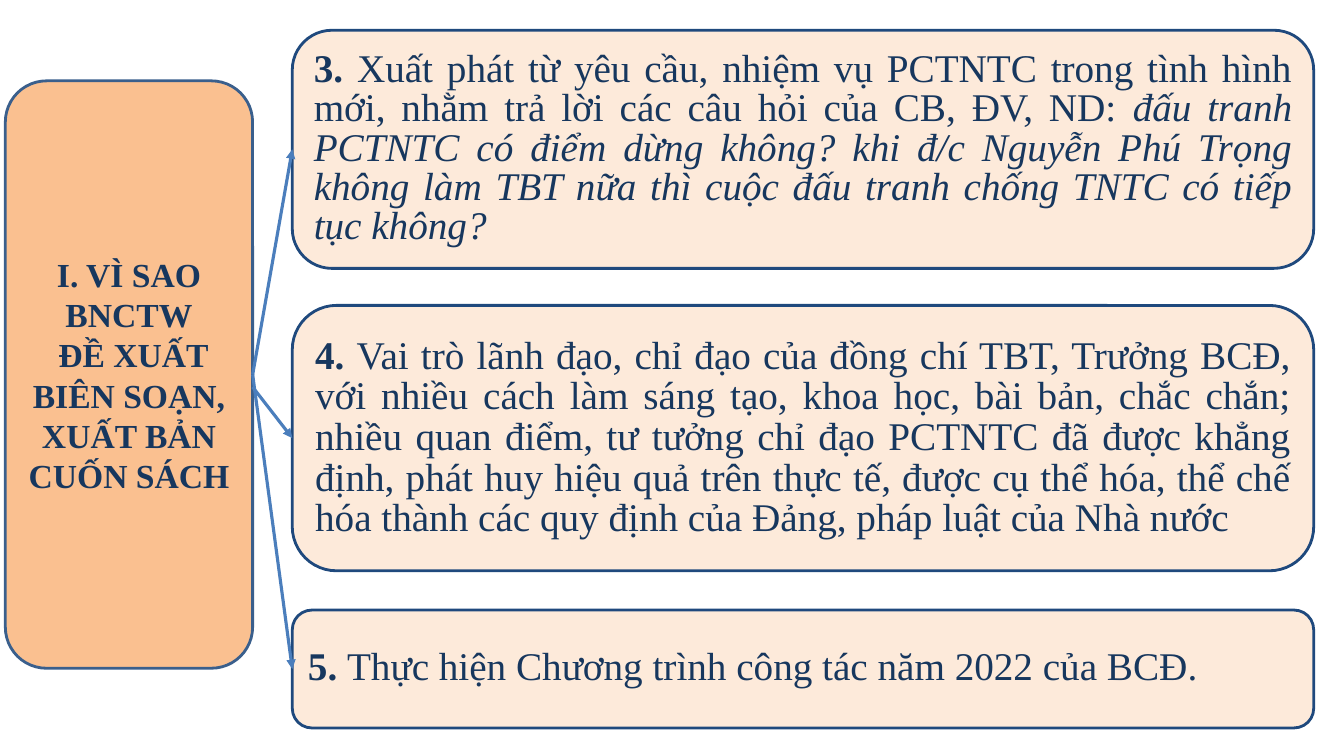
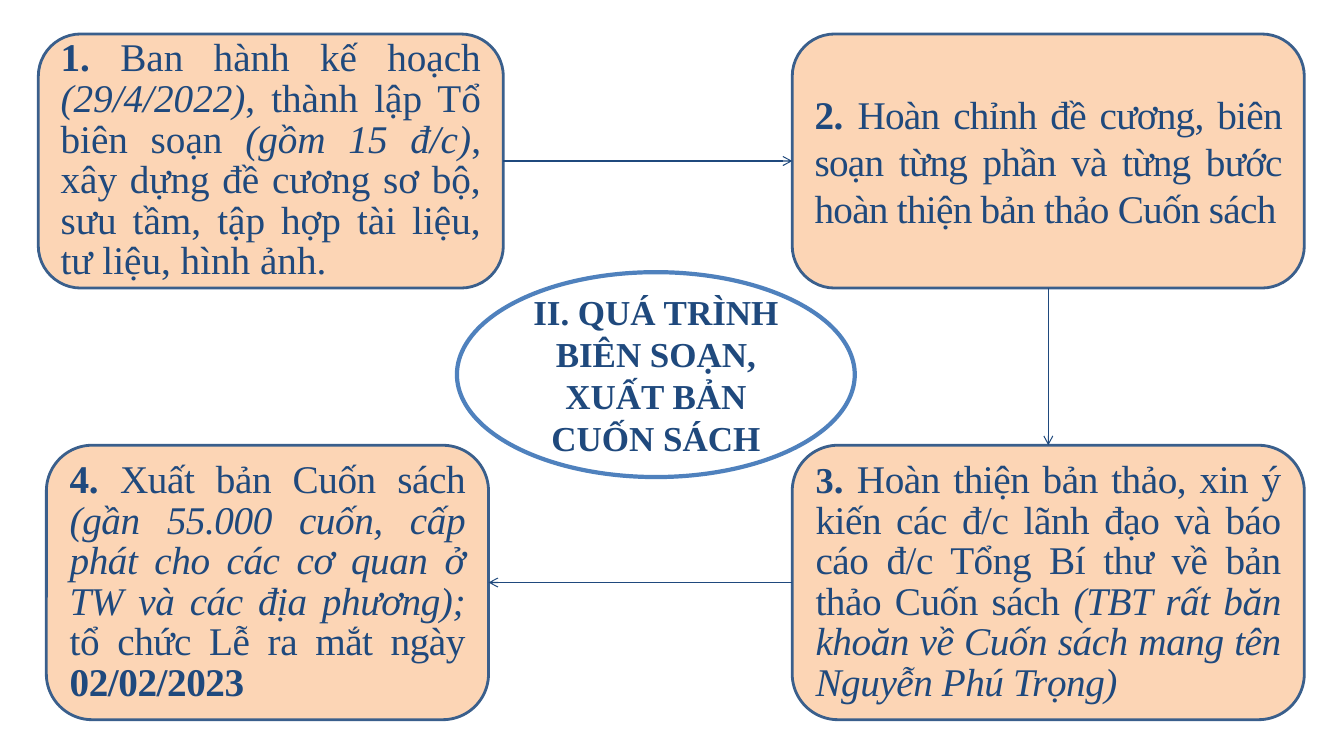
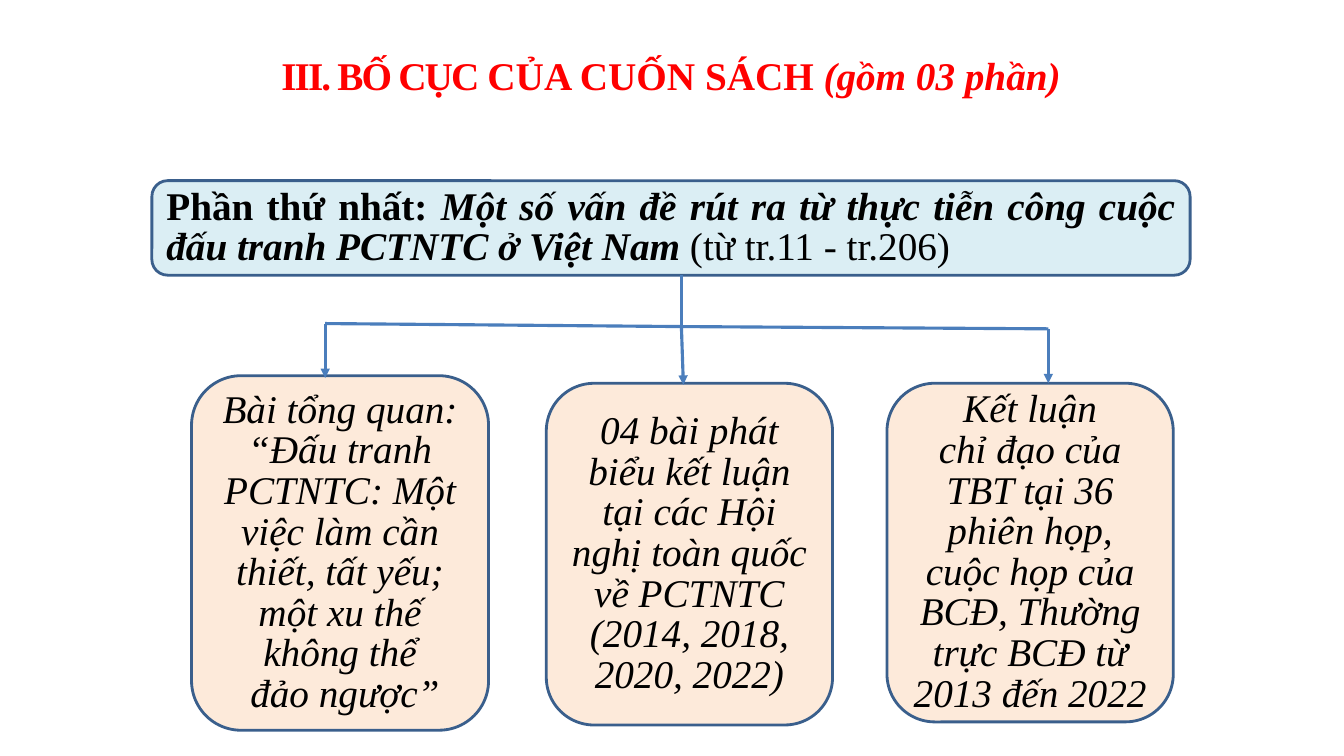
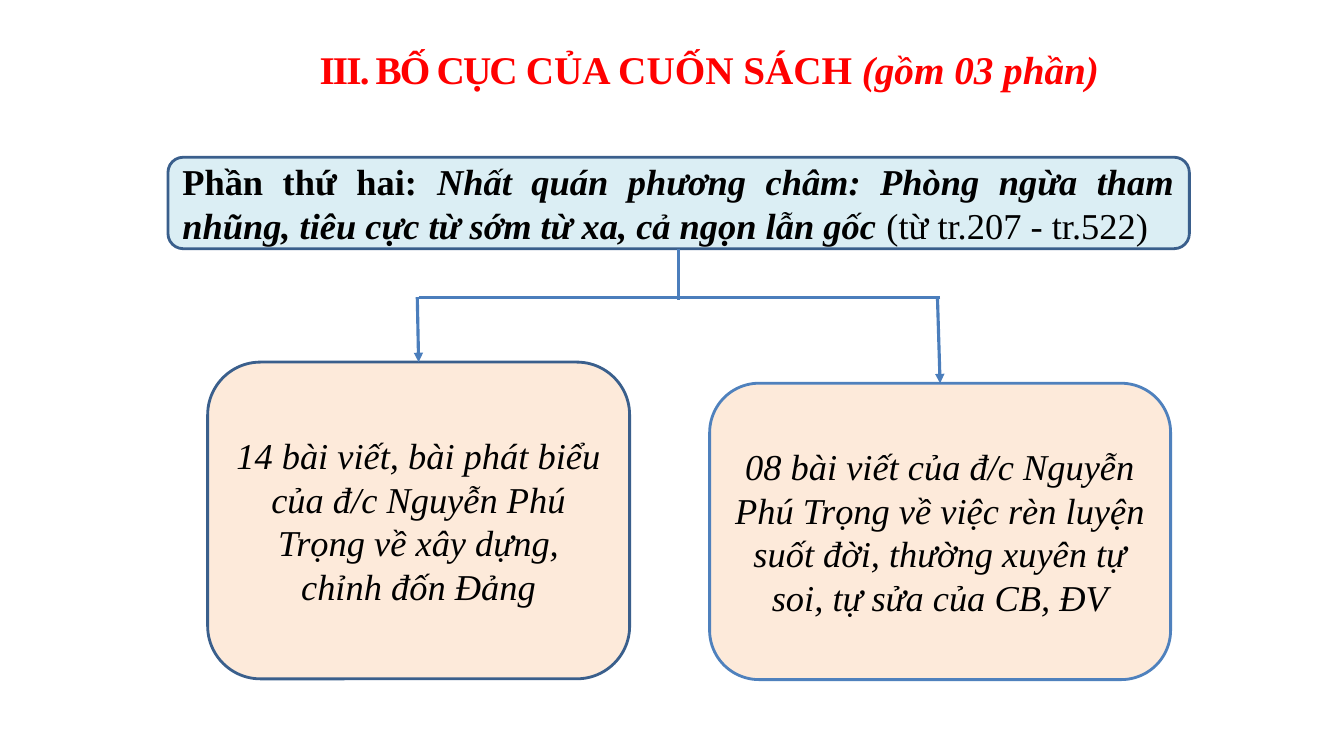
"""Build four slides on the reasons, making and layout of a book."""
from dataclasses import dataclass
from typing import Optional, Union

from pptx import Presentation
from pptx.dml.color import RGBColor
from pptx.enum.shapes import MSO_CONNECTOR, MSO_SHAPE
from pptx.enum.text import MSO_ANCHOR, PP_ALIGN
from pptx.oxml.ns import qn
from pptx.shapes.autoshape import Shape
from pptx.slide import Slide
from pptx.text.text import TextFrame
from pptx.util import Inches, Pt
from lxml.etree import SubElement

FONT = "Times New Roman"
WIDTH, HEIGHT = Inches(13.33), Inches(7.5)
TITLE_ONLY, BLANK = 5, 6
TOP, LEFT, BOTTOM, RIGHT = range(4)
COLORS = {
    "navy": "17375E", "blue": "1F497D", "edge": "3A5F8C", "accent": "4F81BD",
    "arrow": "4B7EBC", "cream": "FDEADA", "peach": "FCD5B5", "orange": "FAC090",
    "ice": "DBEEF4", "white": "FFFFFF", "black": "000000", "red": "FF0000",
}


@dataclass(frozen=True)
class Run:
    text: str
    bold: bool = False
    italic: bool = False
    spacing: float = 0
    size: Optional[float] = None


@dataclass(frozen=True)
class Style:
    color: str
    size: float = 28
    align: PP_ALIGN = PP_ALIGN.CENTER
    leading: Optional[float] = None


@dataclass(frozen=True)
class Area:
    """Position and size in percent of the slide."""
    x: float
    y: float
    w: float
    h: float


@dataclass(frozen=True)
class Box:
    area: Area
    paragraphs: list[list[Run]]
    style: Style
    fill: str
    line: str = "edge"
    weight: float = 2
    kind: MSO_SHAPE = MSO_SHAPE.ROUNDED_RECTANGLE


@dataclass(frozen=True)
class Pen:
    color: str
    weight: float
    tail: Optional[str] = None


@dataclass(frozen=True)
class Joint:
    shape: Shape
    side: int


End = Union[Joint, tuple[float, float]]

ARROW = Pen("arrow", 2.25, "triangle")
RAIL = Pen("arrow", 2.25)
FLOW = Pen("blue", 0.75, "arrow")
REASON = Style("navy", 28, PP_ALIGN.JUSTIFY, 28)
STEP = Style("blue", 28, PP_ALIGN.JUSTIFY, 29)
TITLE = Style("red")


def rgb(name: str) -> RGBColor:
    return RGBColor.from_string(COLORS[name])


def px(share: float) -> int:
    return round(WIDTH * share / 100)


def py(share: float) -> int:
    return round(HEIGHT * share / 100)


def write(tf: TextFrame, paragraphs: list[list[Run]], style: Style) -> None:
    tf.word_wrap = True
    for i, runs in enumerate(paragraphs):
        p = tf.add_paragraph() if i else tf.paragraphs[0]
        p.alignment = style.align
        if style.leading:
            p.line_spacing = Pt(style.leading)
        for run in runs:
            r = p.add_run()
            r.text = run.text
            r.font.name = FONT
            r.font.size = Pt(run.size or style.size)
            r.font.bold, r.font.italic = run.bold, run.italic
            r.font.color.rgb = rgb(style.color)
            if run.spacing:
                r.font._element.set("spc", str(round(run.spacing * 100)))


def add_box(s: Slide, box: Box) -> Shape:
    a = box.area
    sp = s.shapes.add_shape(box.kind, px(a.x), py(a.y), px(a.w), py(a.h))
    sp.shadow.inherit = False
    sp.fill.solid()
    sp.fill.fore_color.rgb = rgb(box.fill)
    sp.line.color.rgb = rgb(box.line)
    sp.line.width = Pt(box.weight)
    sp.text_frame.vertical_anchor = MSO_ANCHOR.MIDDLE
    write(sp.text_frame, box.paragraphs, box.style)
    return sp


def add_line(s: Slide, start: End, end: End, pen: Pen) -> None:
    points = [(0, 0) if isinstance(e, Joint) else (px(e[0]), py(e[1])) for e in (start, end)]
    c = s.shapes.add_connector(MSO_CONNECTOR.STRAIGHT, *points[0], *points[1])
    if isinstance(start, Joint):
        c.begin_connect(start.shape, start.side)
    if isinstance(end, Joint):
        c.end_connect(end.shape, end.side)
    c.line.color.rgb = rgb(pen.color)
    c.line.width = Pt(pen.weight)
    if pen.tail:
        SubElement(c.line._get_or_add_ln(), qn("a:tailEnd"), type=pen.tail)
    SubElement(c._element.spPr, qn("a:effectLst"))


def add_title(s: Slide, x: float, y: float) -> None:
    sp = s.shapes.title
    sp.left, sp.top, sp.width, sp.height = px(x), py(y), px(91.65), py(7.6)
    sp.text_frame.vertical_anchor = MSO_ANCHOR.TOP
    write(sp.text_frame, [[
        Run("III. BỐ CỤC ", bold=True, spacing=-1.3),
        Run("CỦA CUỐN SÁCH ", bold=True),
        Run("(gồm 03 phần)", bold=True, italic=True),
    ]], TITLE)


def add_banner(s: Slide, area: Area, part: str, name: str, pages: str, style: Style) -> Shape:
    runs = [Run(part, bold=True), Run(name, bold=True, italic=True), Run(pages)]
    return add_box(s, Box(area, [runs], style, "ice"))


def add_topic(s: Slide, area: Area, lines: list[str], style: Style, line: str = "edge") -> Shape:
    return add_box(s, Box(area, [[Run(t, italic=True)] for t in lines], style, "cream", line))


def reasons(prs: Presentation) -> None:
    s = prs.slides.add_slide(prs.slide_layouts[BLANK])
    panel = add_box(s, Box(
        Area(0.4, 10.7, 18.4, 77.7),
        [[Run("I. VÌ SAO BNCTW", bold=True)],
         [Run(" ĐỀ XUẤT BIÊN SOẠN, XUẤT BẢN CUỐN SÁCH", bold=True)]],
        Style("navy", 24), "orange"))
    hub = Joint(panel, RIGHT)
    items = [
        (4, 31.5, hub, REASON, [
            Run("3. ", bold=True),
            Run("Xuất phát từ yêu cầu, nhiệm vụ PCTNTC trong tình hình mới, nhằm trả lời "
                "các câu hỏi của CB, ĐV, ND: "),
            Run("đấu tranh PCTNTC có điểm dừng không? khi đ/c Nguyễn Phú Trọng không làm TBT "
                "nữa thì cuộc đấu tranh chống TNTC có tiếp tục không?", italic=True)]),
        (40.4, 35.1, (18.8, 51.2), Style("navy", 28, PP_ALIGN.JUSTIFY, 29), [
            Run("4. ", bold=True),
            Run("Vai trò lãnh đạo, chỉ đạo của đồng chí TBT, Trưởng BCĐ, với nhiều cách làm "
                "sáng tạo, khoa học, bài bản, chắc chắn; nhiều quan điểm, tư tưởng chỉ đạo "
                "PCTNTC đã được khẳng định, phát huy hiệu quả trên thực tế, được cụ thể hóa, "
                "thể chế hóa thành các quy định của Đảng, pháp luật của Nhà nước")]),
        (80.7, 15.6, hub, REASON, [
            Run("5. ", bold=True),
            Run("Thực hiện Chương trình công tác năm 2022 của BCĐ.")]),
    ]
    for y, h, start, style, runs in items:
        sp = add_box(s, Box(Area(21.75, y, 76, h), [runs], style, "cream", "blue"))
        add_line(s, start, Joint(sp, LEFT), ARROW)


def process(prs: Presentation) -> None:
    s = prs.slides.add_slide(prs.slide_layouts[BLANK])
    tight = -0.3
    steps = [
        (Area(2.85, 4.5, 34.6, 33.6), STEP, [
            Run("1. ", bold=True),
            Run("Ban hành kế hoạch "),
            Run("(29/4/2022)", italic=True),
            Run(", thành lập Tổ biên soạn "),
            Run("(gồm 15 đ/c)", italic=True),
            Run(", xây dựng đề cương sơ bộ, sưu tầm, tập hợp tài liệu, tư liệu, hình ảnh.")]),
        (Area(58.95, 4.5, 38.1, 33.6), Style("blue", 28, PP_ALIGN.JUSTIFY), [
            Run("2. ", bold=True, spacing=tight),
            Run("Hoàn chỉnh đề cương, biên soạn từng phần và từng bước hoàn thiện bản thảo "
                "Cuốn sách", spacing=-0.5)]),
        (Area(58.95, 58.9, 38.1, 36.3), STEP, [
            Run("3", bold=True, spacing=tight, size=26),
            Run(". ", bold=True, spacing=tight),
            Run("Hoàn thiện bản thảo, xin ý kiến các đ/c lãnh đạo và báo cáo đ/c Tổng Bí thư "
                "về bản thảo Cuốn sách ", spacing=tight),
            Run("(TBT rất băn khoăn về Cuốn sách mang tên Nguyễn Phú Trọng)",
                italic=True, spacing=tight)]),
        (Area(3.45, 58.9, 32.9, 36.3), STEP, [
            Run("4. ", bold=True, spacing=tight),
            Run("Xuất bản Cuốn sách ", spacing=tight),
            Run("(gần 55.000 cuốn, cấp phát cho các cơ quan ở TW và các địa phương); ",
                italic=True, spacing=tight),
            Run("tổ chức Lễ ra mắt ngày ", spacing=tight),
            Run("02/02/2023", bold=True, spacing=tight)]),
    ]
    boxes = [add_box(s, Box(area, [runs], style, "peach")) for area, style, runs in steps]
    add_box(s, Box(
        Area(34, 36, 29.6, 27.1),
        [[Run("II. QUÁ TRÌNH BIÊN SOẠN, XUẤT BẢN CUỐN SÁCH", bold=True)]],
        Style("blue", 25), "white", "accent", 3, MSO_SHAPE.OVAL))
    sides = [(RIGHT, LEFT), (BOTTOM, TOP), (LEFT, RIGHT)]
    for a, b, (out, into) in zip(boxes, boxes[1:], sides):
        add_line(s, Joint(a, out), Joint(b, into), FLOW)


def part_one(prs: Presentation) -> None:
    s = prs.slides.add_slide(prs.slide_layouts[TITLE_ONLY])
    add_title(s, 4.1, 6.1)
    add_banner(s, Area(11.3, 23.9, 77.25, 12.5), "Phần thứ nhất: ",
               "Một số vấn đề rút ra từ thực tiễn công cuộc đấu tranh PCTNTC ở Việt Nam ",
               "(từ tr.11 - tr.206)", Style("black", 28, PP_ALIGN.JUSTIFY, 29))
    topics = [
        (Area(14.25, 49.7, 22.1, 46.9),
         ["Bài tổng quan: “Đấu tranh PCTNTC: Một việc làm cần thiết, tất yếu; một xu thế "
          "không thể", " đảo ngược”"]),
        (Area(40.65, 50.7, 21.3, 45.2),
         ["04 bài phát biểu kết luận tại các Hội nghị toàn quốc về PCTNTC "
          "(2014, 2018, 2020, 2022)"]),
        (Area(66, 50.7, 21.3, 44.8),
         ["Kết luận", "chỉ đạo của TBT tại 36 phiên họp, cuộc họp của BCĐ, Thường trực BCĐ "
          "từ 2013 đến 2022"]),
    ]
    for area, lines in topics:
        add_topic(s, area, lines, Style("black", leading=29))
    left, fork, right = (24.2, 42.8), (50.7, 43.2), (78, 43.5)
    for start, end, pen in [
        ((50.7, 36.4), fork, RAIL), (left, fork, RAIL), (fork, right, RAIL),
        (left, (24.2, 50), ARROW), (fork, (50.85, 50.9), ARROW), (right, (78, 50.7), ARROW),
    ]:
        add_line(s, start, end, pen)


def part_two(prs: Presentation) -> None:
    s = prs.slides.add_slide(prs.slide_layouts[TITLE_ONLY])
    add_title(s, 6.95, 5.3)
    banner = add_banner(s, Area(12.5, 20.8, 76, 12.1), "Phần thứ hai: ",
                        "Nhất quán phương châm: Phòng ngừa tham nhũng, tiêu cực từ sớm từ xa, "
                        "cả ngọn lẫn gốc ", "(từ tr.207 - tr.522)",
                        Style("black", 26, PP_ALIGN.JUSTIFY))
    rail = 39.3
    add_line(s, Joint(banner, BOTTOM), (50.5, 39.7), RAIL)
    topics = [
        (Area(15.45, 47.9, 31.4, 41.9), "edge", 31.05,
         "14 bài viết, bài phát biểu của đ/c Nguyễn Phú Trọng về xây dựng, chỉnh đốn Đảng"),
        (Area(52.8, 50.7, 34.3, 39.2), "accent", 69.75,
         "08 bài viết của đ/c Nguyễn Phú Trọng về việc rèn luyện suốt đời, thường xuyên tự soi, "
         "tự sửa của CB, ĐV"),
    ]
    for area, line, stem, text in topics:
        sp = add_topic(s, area, [text], Style("black", 26), line)
        add_line(s, (area.x + area.w / 2, rail), (50.7, rail), RAIL)
        add_line(s, (stem, rail), Joint(sp, TOP), ARROW)


def main() -> None:
    prs = Presentation()
    prs.slide_width, prs.slide_height = WIDTH, HEIGHT
    for build in (reasons, process, part_one, part_two):
        build(prs)
    prs.save("out.pptx")


if __name__ == "__main__":
    main()
